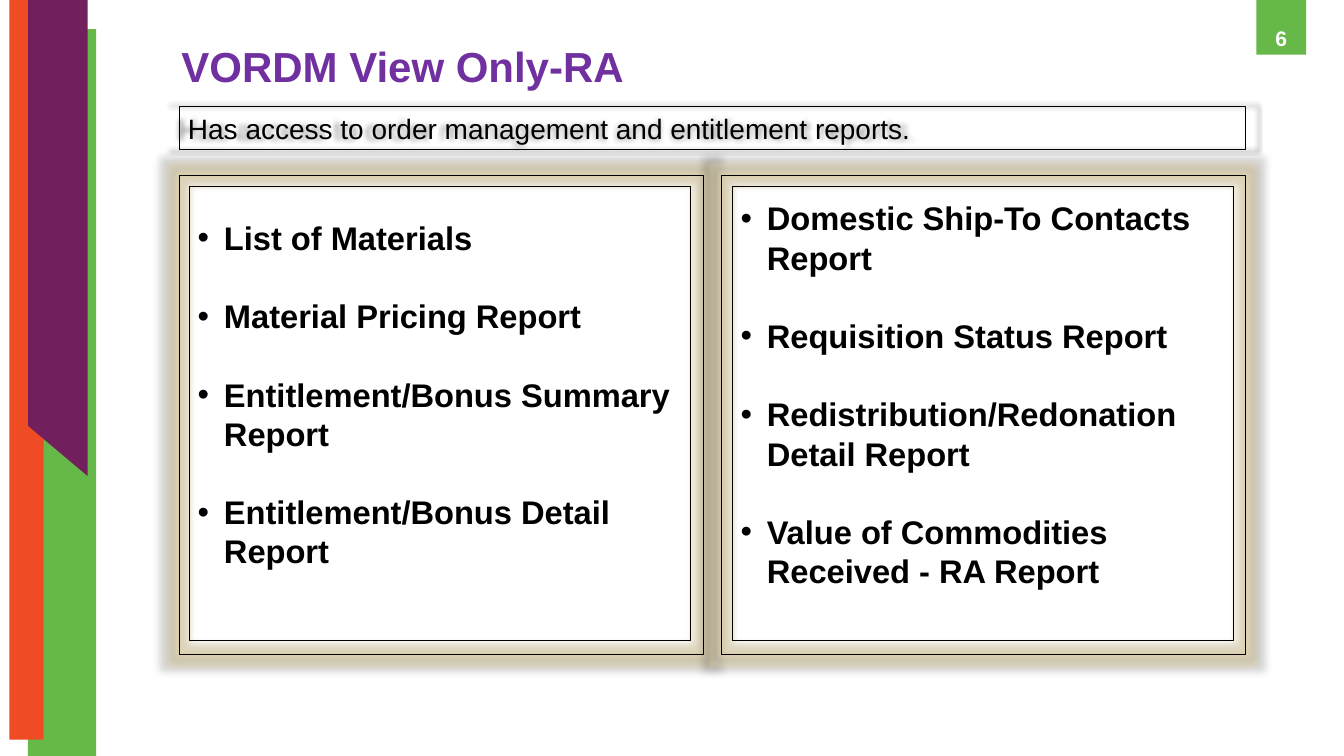
from lxml.etree import SubElement
from pptx import Presentation
from pptx.dml.color import RGBColor
from pptx.enum.shapes import MSO_SHAPE
from pptx.enum.text import MSO_ANCHOR, PP_ALIGN
from pptx.oxml.ns import qn
from pptx.util import Pt

WHITE = RGBColor(0xFF, 0xFF, 0xFF)
BLACK = RGBColor(0, 0, 0)
GREEN = RGBColor(0x66, 0xB9, 0x48)
ORANGE = RGBColor(0xEF, 0x4B, 0x25)
PLUM = RGBColor(0x72, 0x1F, 0x5D)
PURPLE = RGBColor(0x70, 0x30, 0xA0)
SAND = RGBColor(0xE6, 0xD5, 0xA4)
FONT = "Arial"
LINE_HEIGHT = 33.6

MATERIAL_REPORTS = [
    "List of Materials",
    "Material Pricing Report",
    "Entitlement/Bonus Summary Report",
    "Entitlement/Bonus Detail Report",
]
ORDER_REPORTS = [
    "Domestic Ship-To Contacts Report",
    "Requisition Status Report",
    "Redistribution/Redonation Detail Report",
    "Value of Commodities Received - RA Report",
]


def add_run(paragraph, text, size, color, bold=True):
    run = paragraph.add_run()
    run.text = text
    run.font.name = FONT
    run.font.size = Pt(size)
    run.font.bold = bold
    run.font.color.rgb = color


def paint(shape, fill):
    shape.shadow.inherit = False
    shape.fill.solid()
    shape.fill.fore_color.rgb = fill
    shape.line.fill.background()


def add_block(slide, box, fill):
    block = slide.shapes.add_shape(MSO_SHAPE.RECTANGLE, *map(Pt, box))
    paint(block, fill)
    return block


def add_outline(slide, box, weight):
    outline = slide.shapes.add_shape(MSO_SHAPE.RECTANGLE, *map(Pt, box))
    outline.shadow.inherit = False
    outline.fill.background()
    outline.line.color.rgb = BLACK
    outline.line.width = Pt(weight)
    outline.text_frame.word_wrap = True
    return outline


def add_effect_color(effect, color, percent):
    tint = SubElement(effect, qn("a:srgbClr"), val=str(color))
    SubElement(tint, qn("a:alpha"), val=str(percent * 1000))


def add_halo(outline, glow_radius=0):
    effects = outline.element.spPr.find(qn("a:effectLst"))
    if glow_radius:
        glow = SubElement(effects, qn("a:glow"), rad=str(Pt(glow_radius)))
        add_effect_color(glow, SAND, 40)
    shadow = SubElement(effects, qn("a:outerShdw"), blurRad=str(Pt(5)),
                        sx="102000", sy="102000", algn="ctr", rotWithShape="0")
    add_effect_color(shadow, BLACK, 40)


def add_stripes(slide, left, top, height):
    add_block(slide, (left + 16, top + 25, 58.5, height - 25), GREEN)
    add_block(slide, (left, top, 29.5, height - 14), ORANGE)
    fold = left + 16
    ribbon = slide.shapes.build_freeform(fold, top, scale=Pt(1))
    ribbon.add_line_segments([(fold + 51, top), (fold + 51, top + 408),
                              (fold, top + 365)])
    paint(ribbon.convert_to_shape(), PLUM)


def add_page_tab(slide, box, number):
    tab = add_block(slide, box, GREEN)
    tab.text_frame.vertical_anchor = MSO_ANCHOR.BOTTOM
    paragraph = tab.text_frame.paragraphs[0]
    paragraph.alignment = PP_ALIGN.CENTER
    add_run(paragraph, number, 18, WHITE)


def add_heading(slide, box, text):
    heading = slide.shapes.title
    heading.left, heading.top, heading.width, heading.height = map(Pt, box)
    heading.text_frame.vertical_anchor = MSO_ANCHOR.MIDDLE
    paragraph = heading.text_frame.paragraphs[0]
    paragraph.alignment = PP_ALIGN.LEFT
    add_run(paragraph, text, 36, PURPLE)


def add_summary(slide, box, text):
    summary = add_outline(slide, box, 0.75)
    add_halo(summary)
    summary.text_frame.vertical_anchor = MSO_ANCHOR.MIDDLE
    paragraph = summary.text_frame.paragraphs[0]
    paragraph.alignment = PP_ALIGN.LEFT
    add_run(paragraph, text, 24, BLACK, bold=False)


def add_bullet(paragraph):
    properties = paragraph._p.get_or_add_pPr()
    properties.set("marL", str(Pt(22.5)))
    properties.set("indent", str(-Pt(22.5)))
    SubElement(properties, qn("a:buFont"), typeface=FONT)
    SubElement(properties, qn("a:buChar"), char="•")


def add_report_panel(slide, box, reports):
    left, top, width, height = box
    add_halo(add_outline(slide, box, 0.75), glow_radius=7)
    panel = add_outline(
        slide, (left + 9, top + 9.5, width - 19.5, height - 21), 1)
    frame = panel.text_frame
    frame.vertical_anchor = MSO_ANCHOR.MIDDLE
    frame.margin_bottom = Pt(LINE_HEIGHT + 3.6)
    for index, report in enumerate(reports):
        paragraph = frame.add_paragraph() if index else frame.paragraphs[0]
        paragraph.alignment = PP_ALIGN.LEFT
        paragraph.line_spacing = Pt(LINE_HEIGHT)
        paragraph.space_before = Pt(LINE_HEIGHT if index else 0)
        add_bullet(paragraph)
        add_run(paragraph, report, 28, BLACK)


def main():
    deck = Presentation()
    deck.slide_width, deck.slide_height = Pt(1152), Pt(648)
    slide = deck.slides.add_slide(deck.slide_layouts[5])
    add_page_tab(slide, (1077, 0, 42.5, 46.8), "6")
    add_heading(slide, (148.3, 33.5, 928.8, 46), "VORDM View Only-RA")
    add_stripes(slide, 8, 0, 648)
    add_summary(slide, (154, 91.4, 913.7, 36.4),
                "Has access to order management and entitlement reports.")
    for column, reports in enumerate((MATERIAL_REPORTS, ORDER_REPORTS)):
        add_report_panel(
            slide, (153.4 + 465.3 * column, 150.5, 449.3, 410.4), reports)
    deck.save("out.pptx")


if __name__ == "__main__":
    main()
